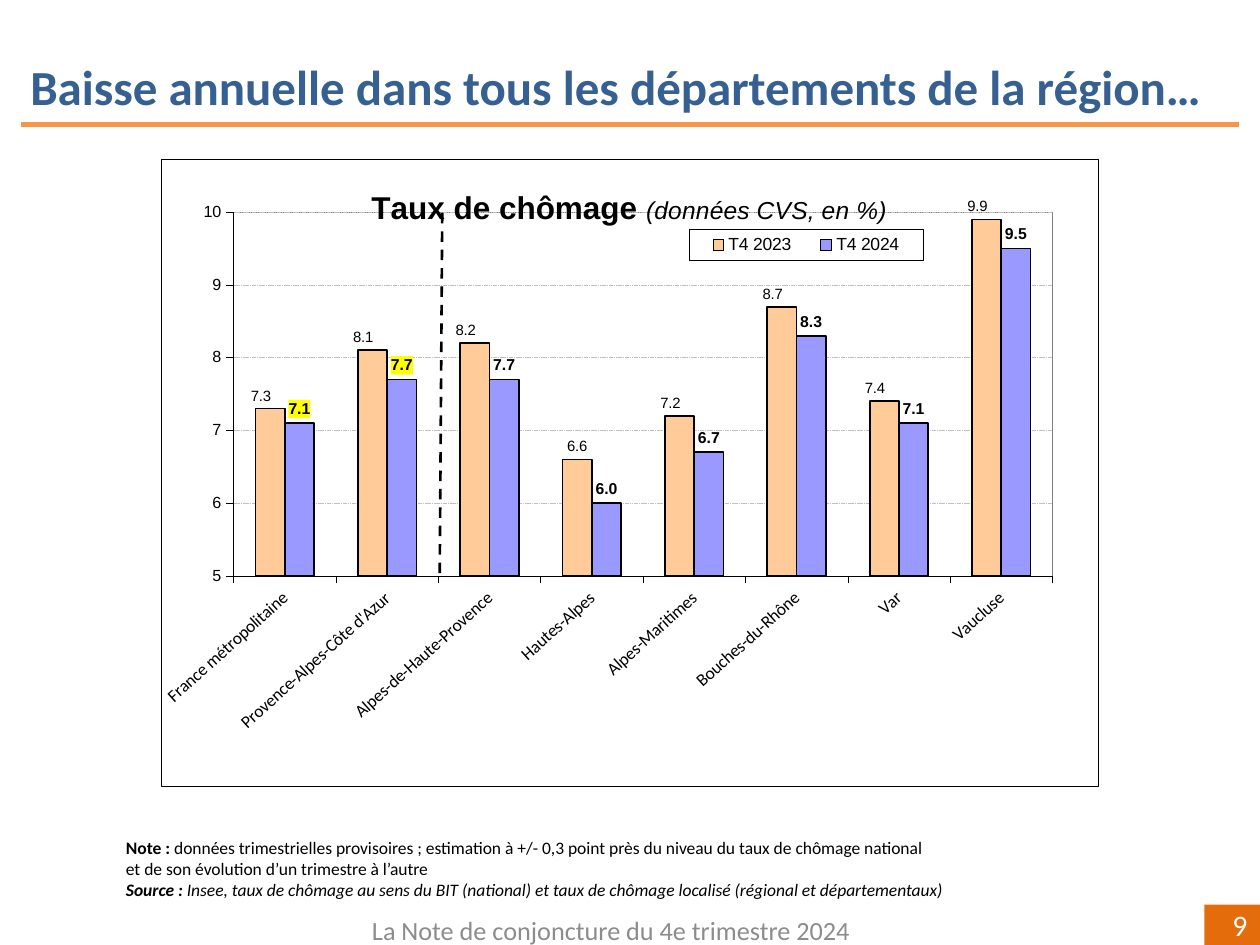
import dataclasses
import typing

import pptx
import pptx.chart.data
import pptx.dml.color
import pptx.enum.chart
import pptx.enum.dml
import pptx.enum.shapes
import pptx.enum.text
import pptx.oxml
import pptx.oxml.ns
import pptx.util

Pt = pptx.util.Pt
RGB = pptx.dml.color.RGBColor
Align = pptx.enum.text.PP_ALIGN
Anchor = pptx.enum.text.MSO_ANCHOR
qn = pptx.oxml.ns.qn

BLACK, WHITE = RGB(0, 0, 0), RGB(255, 255, 255)
NAVY, GREY = RGB(0x37, 0x60, 0x92), RGB(0x8C, 0x8C, 0x8C)
ORANGE, RUST = RGB(0xF7, 0x96, 0x46), RGB(0xE4, 0x6C, 0x0A)
PEACH, LILAC = RGB(0xFF, 0xCC, 0x99), RGB(0x99, 0x99, 0xFF)
SILVER, EDGE = RGB(0xC0, 0xC0, 0xC0), RGB(0x80, 0x80, 0x80)
YELLOW = RGB(255, 255, 0)
WIDE, HIGH = pptx.util.Inches(10), pptx.util.Inches(7.5)


@dataclasses.dataclass
class Box:
    """Left, top, width and height in percent of the slide."""
    x: float
    y: float
    w: float
    h: float

    def emu(self) -> tuple:
        return (int(WIDE * self.x / 100), int(HIGH * self.y / 100),
                int(WIDE * self.w / 100), int(HIGH * self.h / 100))


@dataclasses.dataclass
class Run:
    text: str
    size: float
    color: RGB = BLACK
    bold: bool = False
    slant: bool = False
    face: str = "Calibri"


@dataclasses.dataclass
class Bars:
    name: str
    vals: tuple
    color: RGB
    size: float
    bold: bool


# Chart data
PLACES = ("France métropolitaine", "Provence-Alpes-Côte d'Azur", "Alpes-de-Haute-Provence",
          "Hautes-Alpes", "Alpes-Maritimes", "Bouches-du-Rhône", "Var", "Vaucluse")
RATES = (
    Bars("T4 2023", (7.3, 8.1, 8.2, 6.6, 7.2, 8.7, 7.4, 9.9), PEACH, 8.5, False),
    Bars("T4 2024", (7.1, 7.7, 7.7, 6.0, 6.7, 8.3, 7.1, 9.5), LILAC, 9, True),
)
SHIFTED = (0, 1, 2, 4, 5, 6, 7)
MARKED = (0, 1)


def style(font, size: float, color: RGB, bold=False, slant=False, face="Arial") -> None:
    font.size, font.name, font.bold, font.italic = Pt(size), face, bold, slant
    font.color.rgb = color


def write(frame, lines: typing.Sequence, align=Align.LEFT) -> None:
    for n, runs in enumerate(lines):
        para = frame.paragraphs[0] if n == 0 else frame.add_paragraph()
        para.alignment = align
        for item in runs:
            run = para.add_run()
            run.text = item.text
            style(run.font, item.size, item.color, item.bold, item.slant, item.face)


def setup(frame, anchor, pads=(0.1, 0.05, 0.1, 0.05)) -> None:
    frame.word_wrap, frame.vertical_anchor = True, anchor
    (frame.margin_left, frame.margin_top,
     frame.margin_right, frame.margin_bottom) = map(pptx.util.Inches, pads)


def note(slide, box: Box, lines, align=Align.LEFT, anchor=Anchor.TOP,
         pads=(0.1, 0.05, 0.1, 0.05)) -> None:
    frame = slide.shapes.add_textbox(*box.emu()).text_frame
    setup(frame, anchor, pads)
    write(frame, lines, align)


def rule(slide, box: Box, color: RGB, width: float, dash=None) -> None:
    x, y, w, h = box.emu()
    line = slide.shapes.add_connector(
        pptx.enum.shapes.MSO_CONNECTOR.STRAIGHT, x, y, x + w, y + h)
    line.line.color.rgb, line.line.width = color, Pt(width)
    if dash:
        line.line.dash_style = dash
    pptx.oxml.ns  # namespace map used by the tag below
    line._element.spPr.append(make("a:effectLst"))


def make(tag: str, body: str = ""):
    names = pptx.oxml.ns.nsdecls("a", "c")
    return pptx.oxml.parse_xml(f"<{tag} {names}>{body}</{tag}>")


def paint(fill: RGB, line: typing.Optional[RGB] = None):
    body = f'<a:solidFill><a:srgbClr val="{fill}"/></a:solidFill>'
    if line is not None:
        body += (f'<a:ln w="3175"><a:solidFill><a:srgbClr val="{line}"/>'
                 '</a:solidFill></a:ln>')
    return make("c:spPr", body)


def layout(mode: str, **spots: float):
    body = '<c:layoutTarget val="inner"/>' if mode == "inner" else ""
    if mode != "shift":
        body += '<c:xMode val="edge"/><c:yMode val="edge"/>'
    body += "".join(f'<c:{key} val="{val}"/>' for key, val in spots.items())
    return make("c:layout", f"<c:manualLayout>{body}</c:manualLayout>")


def settle(node, spot, after: typing.Optional[str] = None) -> None:
    """Give a chart part its manual layout, after the named child or first."""
    for old in node.findall(qn("c:layout")):
        node.remove(old)
    if after:
        node.find(qn(after)).addnext(spot)
    else:
        node.insert(0, spot)


def label(series, item: Bars) -> None:
    tags = series.data_labels
    tags.show_value = True
    tags.number_format, tags.number_format_is_linked = "0.0", False
    tags.position = pptx.enum.chart.XL_LABEL_POSITION.OUTSIDE_END
    style(tags.font, item.size, BLACK, item.bold)
    for n in MARKED if item.bold else SHIFTED:
        tag = series.points[n].data_label
        style(tag.font, item.size, BLACK, item.bold)
        tag.position = pptx.enum.chart.XL_LABEL_POSITION.OUTSIDE_END
    for node in tags._element.findall(qn("c:dLbl")):
        if item.bold:
            node.find(qn("c:txPr")).addprevious(paint(YELLOW))
        else:
            settle(node, layout("shift", x=-0.01, y=0), "c:idx")


def axes(chart) -> None:
    cat, val = chart.category_axis, chart.value_axis
    for axis, size, face in ((cat, 10, "Calibri"), (val, 9.2, "Arial")):
        style(axis.tick_labels.font, size, BLACK, face=face)
        axis.format.line.color.rgb, axis.format.line.width = BLACK, Pt(0.25)
        axis.major_tick_mark = pptx.enum.chart.XL_TICK_MARK.OUTSIDE
    cat._element.find(qn("c:txPr")).find(qn("a:bodyPr")).set("rot", str(-42 * 60000))
    val.minimum_scale, val.maximum_scale, val.major_unit = 5, 10, 1
    val.tick_labels.number_format = "0"
    val.tick_labels.number_format_is_linked = False
    grid = val.major_gridlines.format.line
    grid.color.rgb, grid.width = SILVER, Pt(0.25)
    grid.dash_style = pptx.enum.dml.MSO_LINE.SQUARE_DOT


def plot(slide, box: Box) -> None:
    data = pptx.chart.data.CategoryChartData(number_format="0.0")
    data.categories = PLACES
    for item in RATES:
        data.add_series(item.name, item.vals)
    kind = pptx.enum.chart.XL_CHART_TYPE.COLUMN_CLUSTERED
    chart = slide.shapes.add_chart(kind, *box.emu(), data).chart
    style(chart.font, 8.5, BLACK)
    chart._chartSpace.find(qn("c:txPr")).addprevious(paint(WHITE, BLACK))

    # Title over the plot
    chart.has_title = True
    write(chart.chart_title.text_frame, [[
        Run("Taux de chômage ", 18, bold=True, face="Arial"),
        Run("(données CVS, en %)", 14, slant=True, face="Arial")]], Align.CENTER)
    head = chart.chart_title._element
    settle(head, layout("edge", x=0.22, y=0.04), "c:tx")
    head.find(qn("c:overlay")).set("val", "1")

    # Bars and axes
    bars = chart.plots[0]
    bars.gap_width, bars.overlap, bars.vary_by_categories = 150, 0, False
    for series, item in zip(bars.series, RATES):
        series.format.fill.solid()
        series.format.fill.fore_color.rgb = item.color
        series.format.line.color.rgb, series.format.line.width = BLACK, Pt(1)
        label(series, item)
    axes(chart)
    area = chart._chartSpace.chart.plotArea
    settle(area, layout("inner", x=0.077, y=0.085, w=0.874, h=0.58))
    area.append(paint(WHITE, EDGE))

    # Legend
    chart.has_legend = True
    chart.legend.position = pptx.enum.chart.XL_LEGEND_POSITION.RIGHT
    chart.legend.include_in_layout = False
    style(chart.legend.font, 10, BLACK)
    key = chart.legend._element
    settle(key, layout("edge", x=0.563, y=0.112, w=0.25, h=0.05), "c:legendPos")
    key.find(qn("c:txPr")).addprevious(paint(WHITE, BLACK))


def main() -> None:
    deck = pptx.Presentation()
    deck.slide_width, deck.slide_height = WIDE, HIGH
    slide = deck.slides.add_slide(deck.slide_layouts[5])

    # Title and rule
    title = slide.shapes.title
    title.left, title.top, title.width, title.height = Box(1.4, 5.33, 97.2, 7.6).emu()
    setup(title.text_frame, Anchor.TOP)
    title.text_frame.auto_size = pptx.enum.text.MSO_AUTO_SIZE.NONE
    write(title.text_frame, [[Run(
        "Baisse annuelle dans tous les départements de la région…", 28, NAVY, True)]])
    rule(slide, Box(1.7, 13.2, 96.6, 0), ORANGE, 3)

    # Page number and footer
    page = slide.shapes.add_shape(
        pptx.enum.shapes.MSO_SHAPE.RECTANGLE, *Box(95.6, 95.73, 4.4, 4.27).emu())
    page.shadow.inherit = False
    page.fill.solid()
    page.fill.fore_color.rgb = RUST
    page.line.fill.background()
    setup(page.text_frame, Anchor.MIDDLE)
    write(page.text_frame, [[Run("9", 17, WHITE)]], Align.RIGHT)
    note(slide, Box(24.1, 95.73, 48.8, 5.33),
         [[Run("La Note de conjoncture du 4e trimestre 2024", 15, GREY)]],
         Align.CENTER, Anchor.MIDDLE)

    # Note and source
    note(slide, Box(9.8, 88.13, 68.3, 7.07), [
        [Run("Note : ", 10, bold=True),
         Run("données trimestrielles provisoires ; estimation à +/- 0,3 point près "
             "du niveau du taux de chômage national", 10)],
        [Run("et de son évolution d’un trimestre à l’autre", 10)],
        [Run("Source : ", 10, bold=True, slant=True),
         Run("Insee, taux de chômage au sens du BIT (national) et taux de chômage "
             "localisé (régional et départementaux)", 10, slant=True)],
    ], pads=(0.02, 0.03, 0, 0))

    # Chart, with the line that sets the departments apart
    plot(slide, Box(12.8, 16.8, 74.4, 66.4))
    rule(slide, Box(35.1, 22.53, -0.2, 38.67), BLACK, 1.5, pptx.enum.dml.MSO_LINE.DASH)
    deck.save("out.pptx")


if __name__ == "__main__":
    main()
